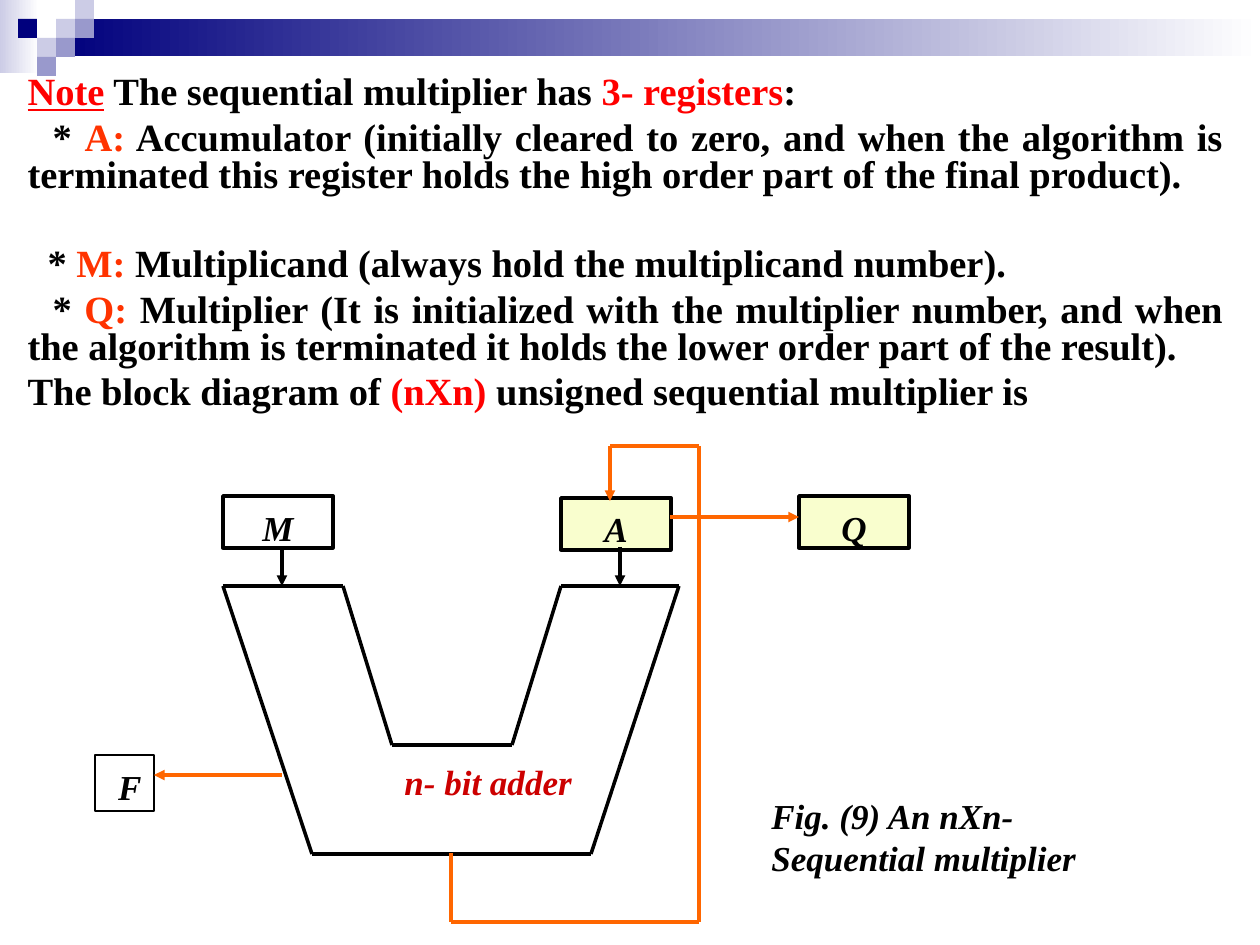
from itertools import pairwise

from lxml import etree
from pptx import Presentation
from pptx import util as u
from pptx.dml.color import RGBColor
from pptx.enum import shapes, text
from pptx.oxml.ns import qn

PX = 914400 / 126
FONT = "Times New Roman"
COLORS = {
    "black": "000000", "white": "FFFFFF", "navy": "00007D", "lilac": "CCCCE6",
    "violet": "9999CC", "red": "FF0000", "vermilion": "FF3300",
    "crimson": "CC0000", "orange": "FF6600", "cream": "F9FECE",
}

# Header: gradient bars (box, start colour), then grid squares (column, row, colour)
BARS = [((0, 0, 39, 73), "lilac"), ((57, 19, 1203, 37), "navy")]
CELL, GRID_LEFT = 19, 18
SQUARES = [
    (2, 1, "lilac"), (3, 0, "lilac"), (3, 1, "violet"), (1, 2, "lilac"),
    (0, 1, "navy"), (2, 2, "violet"), (1, 3, "violet"),
]

# Notes: first-line indent in px, space after in pt, runs of (text, colour)
NOTES_BOX = (15, 66, 1221, 367)
NOTES = [
    (0, 5, [("Note", "red"), (" The sequential multiplier has ", "black"),
            ("3- registers", "red"), (":", "black")]),
    (25, 30, [("* ", "black"), ("A:", "vermilion"),
              (" Accumulator (initially cleared to zero, and when the algorithm is "
               "terminated this register holds the high order part of the final "
               "product).", "black")]),
    (20, 5, [("* ", "black"), ("M: ", "vermilion"),
             ("Multiplicand (always hold the multiplicand number).", "black")]),
    (25, 5, [("* ", "black"), ("Q: ", "vermilion"),
             ("Multiplier (It is initialized with the multiplier number, and when "
              "the algorithm is terminated it holds the lower order part of the "
              "result).", "black")]),
    (0, 5, [("The block diagram of", "black"), (" (nXn)", "red"),
            (" unsigned sequential multiplier is", "black")]),
]

# Diagram: (label, box, fill, line width in pt, alignment)
ALIGN = text.PP_ALIGN
REGISTERS = [
    ("F", (95, 755, 59, 56), None, 0.75, ALIGN.RIGHT),
    ("M", (223, 496, 110, 52), None, 2, ALIGN.CENTER),
    ("A", (561, 498, 110, 52), "cream", 2, ALIGN.CENTER),
    ("Q", (799, 496, 110, 52), "cream", 2, ALIGN.CENTER),
]
CAPTIONS = [
    ("n- bit adder", (392, 750, 198, 54), "crimson"),
    ("Fig. (9) An nXn- Sequential multiplier", (759, 784, 407, 97), "black"),
]
# Lines: (points, colour, arrow at the last point)
ADDER = [(223, 586), (343, 586), (392, 745), (512, 745),
         (561, 586), (679, 586), (591, 854), (312, 854), (223, 586)]
FEEDBACK = [(451, 853), (451, 922), (699, 922), (699, 446), (610, 446), (610, 501)]
LINES = [
    (ADDER, "black", False),
    ([(282, 547), (282, 586)], "black", True),
    ([(620, 547), (620, 586)], "black", True),
    ([(670, 517), (799, 517)], "orange", True),
    ([(282, 775), (154, 775)], "orange", True),
    (FEEDBACK, "orange", True),
]


def px(*values):
    return [u.Emu(round(v * PX)) for v in values]


def rgb(name):
    return RGBColor.from_string(COLORS[name])


def add_run(p, words, color, **style):
    r = p.add_run()
    r.text = words
    for key, value in {"name": FONT, "bold": True, **style}.items():
        setattr(r.font, key, value)
    r.font.color.rgb = rgb(color)


def add_box(s, box, fill=None, line_width=None):
    sp = s.shapes.add_shape(shapes.MSO_SHAPE.RECTANGLE, *px(*box))
    sp.shadow.inherit = False
    if fill:
        sp.fill.solid()
        sp.fill.fore_color.rgb = rgb(fill)
    else:
        sp.fill.background()
    if line_width:
        sp.line.color.rgb = rgb("black")
        sp.line.width = u.Pt(line_width)
    else:
        sp.line.fill.background()
    return sp


def set_label(sp, words, color, align):
    tf = sp.text_frame
    tf.word_wrap = True
    tf.vertical_anchor = text.MSO_ANCHOR.TOP
    tf.margin_top = px(10)[0]
    tf.paragraphs[0].alignment = align
    add_run(tf.paragraphs[0], words, color, size=u.Pt(20), italic=True)


def add_path(s, points, color, arrow):
    """Join the points with straight connectors."""
    for start, end in pairwise(points):
        line = s.shapes.add_connector(shapes.MSO_CONNECTOR.STRAIGHT, *px(*start, *end))
        line.line.color.rgb = rgb(color)
        line.line.width = u.Pt(2)
        if arrow and end == points[-1]:
            etree.SubElement(line.line._get_or_add_ln(), qn("a:tailEnd"), type="triangle")
        etree.SubElement(line._element.spPr, qn("a:effectLst"))


def add_header(s):
    for box, color in BARS:
        fill = add_box(s, box).fill
        fill.gradient()
        fill.gradient_angle = 0
        for stop, name in zip(fill.gradient_stops, (color, "white")):
            stop.color.rgb = rgb(name)
    for col, row, color in SQUARES:
        add_box(s, (GRID_LEFT + col * CELL, row * CELL, CELL, CELL), color)


def fill_notes(sp):
    sp.left, sp.top, sp.width, sp.height = px(*NOTES_BOX)
    tf = sp.text_frame
    tf.auto_size = text.MSO_AUTO_SIZE.NONE
    tf.margin_top = px(10)[0]
    for i, (indent, after, runs) in enumerate(NOTES):
        p = tf.add_paragraph() if i else tf.paragraphs[0]
        p.alignment = ALIGN.JUSTIFY
        p.line_spacing = 0.8
        p.space_before = u.Pt(0)
        p.space_after = u.Pt(after)
        pPr = p._p.get_or_add_pPr()
        pPr.set("marL", "0")
        pPr.set("indent", str(px(indent)[0]))
        etree.SubElement(pPr, qn("a:buNone"))
        for words, color in runs:
            add_run(p, words, color, size=u.Pt(22), underline=words == "Note")


def main():
    prs = Presentation()
    prs.slide_width, prs.slide_height = u.Inches(10), u.Inches(7.5)
    s = prs.slides.add_slide(prs.slide_layouts[1])
    title = s.shapes.title._element
    title.getparent().remove(title)

    add_header(s)
    fill_notes(s.placeholders[1])
    for label, box, fill, width, align in REGISTERS:
        set_label(add_box(s, box, fill, width), label, "black", align)
    for words, box, color in CAPTIONS:
        set_label(s.shapes.add_textbox(*px(*box)), words, color, ALIGN.LEFT)
    for points, color, arrow in LINES:
        add_path(s, points, color, arrow)
    prs.save("out.pptx")


if __name__ == "__main__":
    main()
